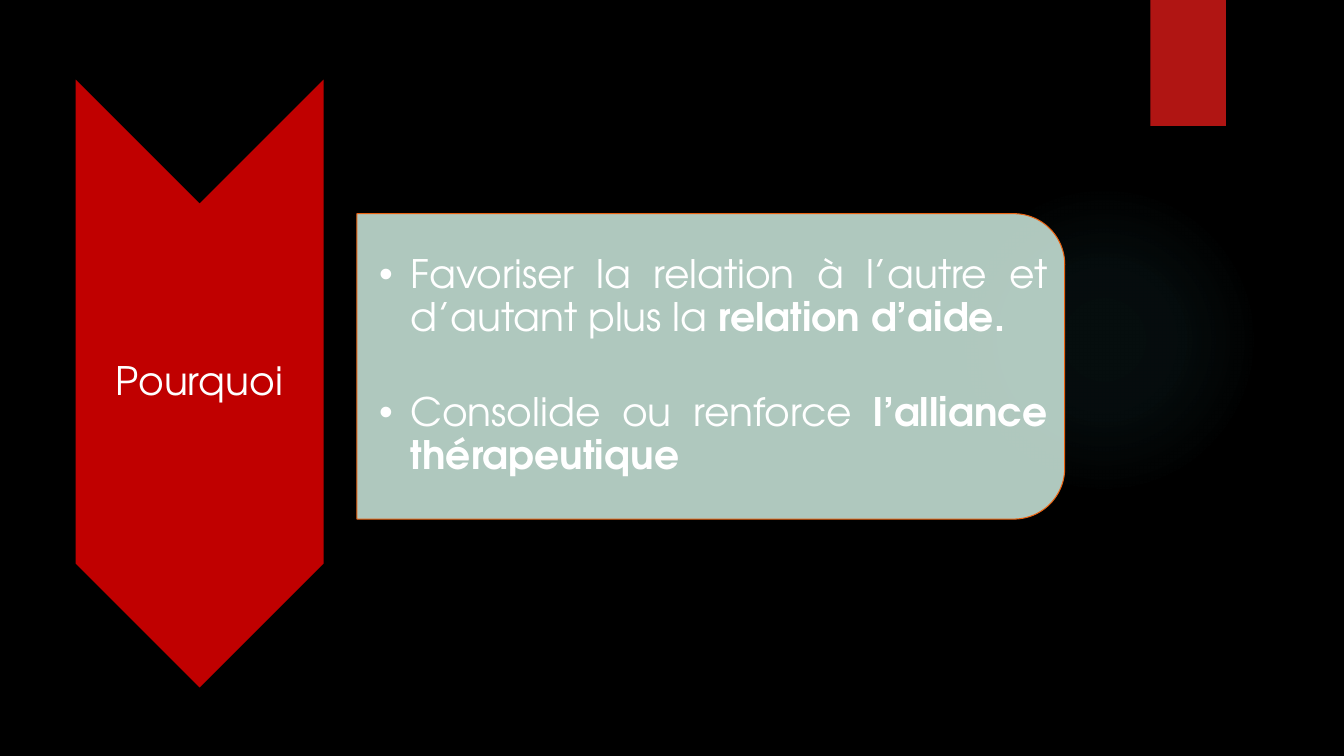
from pptx import Presentation
from pptx.dml.color import RGBColor
from pptx.enum.shapes import MSO_SHAPE as Shape
from pptx.enum.text import MSO_ANCHOR as Anchor, MSO_AUTO_SIZE as AutoSize, PP_ALIGN as Align
from pptx.oxml import parse_xml
from pptx.oxml.ns import nsdecls, qn
from pptx.util import Inches, Pt
from lxml.etree import SubElement

# Content: each paragraph is a list of (text, bold) runs
HEADING = [[("Pourquoi", False)]]
REASONS = [
    [("Favoriser la relation à l’autre et d’autant plus la ", False), ("relation d’aide.", True)],
    [("Consolide ou renforce ", False), ("l’alliance thérapeutique", True)],
]

FONT = "TeX Gyre Adventor"
BLACK = RGBColor(0x00, 0x00, 0x00)
WHITE = RGBColor(0xFF, 0xFF, 0xFF)
RED = RGBColor(0xC0, 0x00, 0x00)
TAB_RED = RGBColor(0xB0, 0x15, 0x13)
MINT = RGBColor(0xC3, 0xDE, 0xD3)
ORANGE = RGBColor(0xEA, 0x63, 0x12)
GLOW = RGBColor(0x50, 0xB9, 0xC1)
GLOW_STOPS = [(0, 7), (36, 6), (69, 0)]  # position %, opacity %

# Layout in inches: left, top, width, height as seen on the slide
TAB = (11.41, 0, 0.75, 1.25)
HALO = (9.41, 1.83, 3.08, 3.08)
ARROW = (0.75, 0.79, 2.46, 6.03)
ARROW_TEXT = (0.75, 2.01, 2.46, 3.57)
PANEL = (3.54, 2.12, 7.02, 3.03)
PANEL_TEXT = (3.54, 2.27, 6.87, 2.73)
INDENT = Inches(0.31)


def add_block(slide, kind, box, color, turned=False, line=None):
    """Draw a filled shape; a turned one is rotated 90° to fill its box."""
    left, top, width, height = box
    if turned:
        left, top = left + (width - height) / 2, top + (height - width) / 2
        width, height = height, width
    shape = slide.shapes.add_shape(kind, *map(Inches, (left, top, width, height)))
    shape.rotation = 90 if turned else 0
    shape.shadow.inherit = False
    shape.fill.solid()
    shape.fill.fore_color.rgb = color
    if line is None:
        shape.line.fill.background()
    else:
        shape.line.color.rgb = line
        shape.line.width = Pt(0.75)
    return shape


def write_text(shape, paragraphs, box, align, inset=0.02, bullet=None, gap=0):
    """Place a text holder and fill it with formatted paragraphs."""
    shape.left, shape.top, shape.width, shape.height = map(Inches, box)
    frame = shape.text_frame
    frame.word_wrap = True
    frame.auto_size = AutoSize.NONE
    frame.vertical_anchor = Anchor.MIDDLE
    frame.margin_left = Inches(inset)
    frame.margin_right = frame.margin_top = frame.margin_bottom = Inches(0.02)
    for index, runs in enumerate(paragraphs):
        paragraph = frame.add_paragraph() if index else frame.paragraphs[0]
        paragraph.alignment = align
        paragraph.line_spacing = 0.9
        paragraph.space_before = Pt(gap if index else 0)
        if bullet:
            properties = paragraph._p.get_or_add_pPr()
            properties.set("marL", str(INDENT))
            properties.set("indent", str(-INDENT))
            SubElement(properties, qn("a:buChar")).set("char", bullet)
        for text, bold in runs:
            run = paragraph.add_run()
            run.text = text
            run.font.name = FONT
            run.font.size = Pt(28)
            run.font.bold = bold
            run.font.color.rgb = WHITE


def main():
    presentation = Presentation()
    presentation.slide_width, presentation.slide_height = Inches(13.33), Inches(7.5)
    slide = presentation.slides.add_slide(presentation.slide_layouts[1])
    slide.background.fill.solid()
    slide.background.fill.fore_color.rgb = BLACK

    # Soft halo: radial gradient fading to transparent
    halo = add_block(slide, Shape.OVAL, HALO, GLOW)
    stops = "".join(
        f'<a:gs pos="{position * 1000}"><a:srgbClr val="{GLOW}">'
        f'<a:alpha val="{opacity * 1000}"/></a:srgbClr></a:gs>'
        for position, opacity in GLOW_STOPS
    )
    gradient = parse_xml(
        f'<a:gradFill {nsdecls("a")}><a:gsLst>{stops}</a:gsLst><a:path path="circle">'
        '<a:fillToRect l="50000" t="50000" r="50000" b="50000"/></a:path></a:gradFill>'
    )
    halo_properties = halo._element.spPr
    halo_properties.replace(halo_properties.find(qn("a:solidFill")), gradient)

    # Corner tab, arrow and translucent panel
    add_block(slide, Shape.RECTANGLE, TAB, TAB_RED)
    add_block(slide, Shape.CHEVRON, ARROW, RED, turned=True)
    panel = add_block(slide, Shape.ROUND_2_SAME_RECTANGLE, PANEL, MINT, turned=True, line=ORANGE)
    panel_color = panel._element.spPr.find(qn("a:solidFill")).find(qn("a:srgbClr"))
    SubElement(panel_color, qn("a:alpha")).set("val", "90000")

    # Title and list, brought in front of the shapes
    title, body = slide.shapes.title, slide.placeholders[1]
    for holder in (title, body):
        slide.shapes._spTree.append(holder._element)
    write_text(title, HEADING, ARROW_TEXT, Align.CENTER)
    write_text(body, REASONS, PANEL_TEXT, Align.JUSTIFY, inset=0.22, bullet="•", gap=38)

    presentation.save("out.pptx")


if __name__ == "__main__":
    main()
